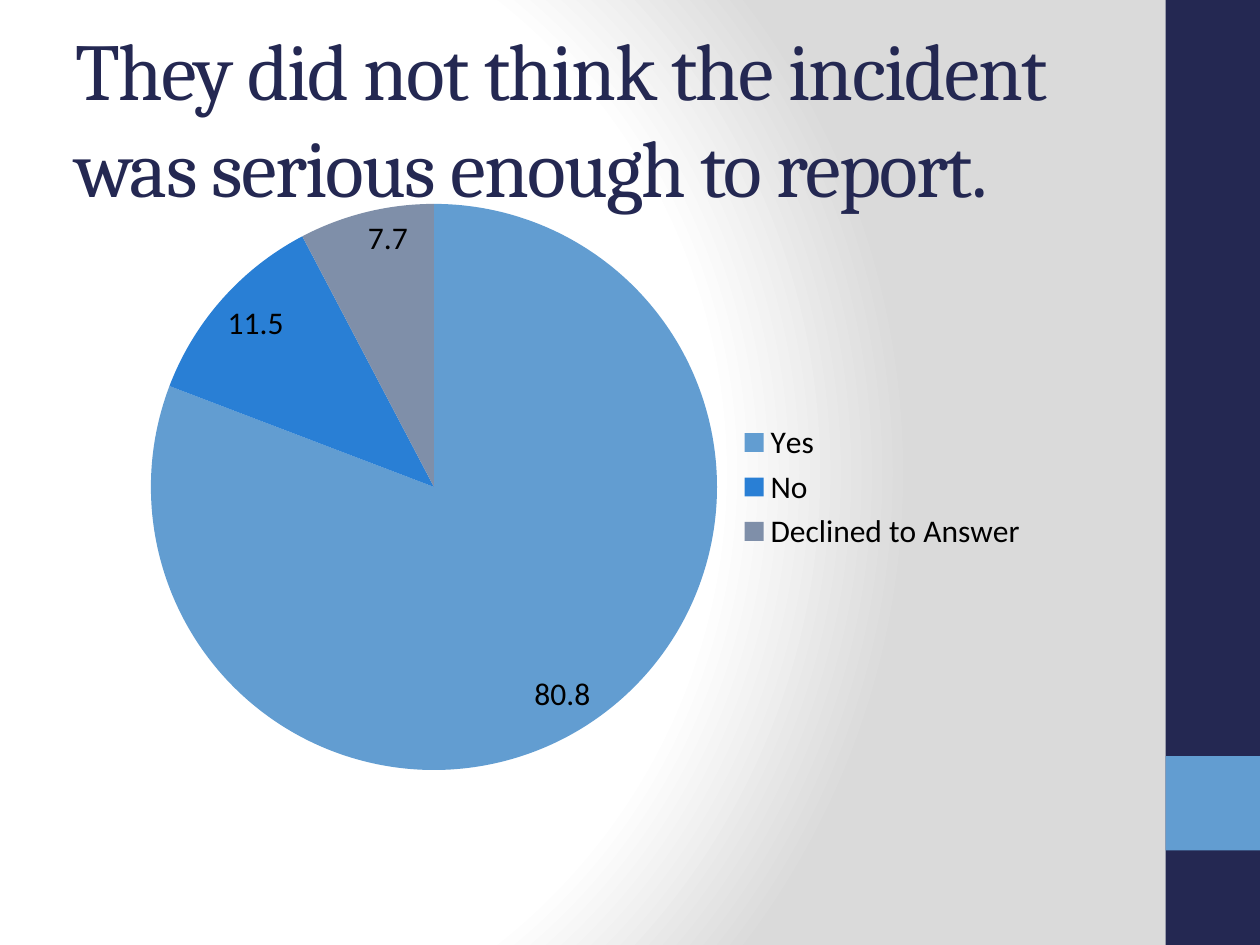
from lxml.etree import SubElement
from pptx import Presentation
from pptx.chart.data import CategoryChartData
from pptx.dml.color import RGBColor
from pptx.enum.chart import XL_CHART_TYPE, XL_LABEL_POSITION, XL_LEGEND_POSITION
from pptx.enum.shapes import MSO_SHAPE
from pptx.enum.text import MSO_ANCHOR
from pptx.oxml.ns import qn
from pptx.util import Emu, Pt

PX = 9144
NAVY, SKY, BLUE, SLATE = "242852", "629DD1", "297FD5", "7F8FA9"
WHITE, GREY, BLACK = "FFFFFF", "DADADA", "000000"


def rgb(value):
    return RGBColor.from_string(value)


def box(*lengths):
    return [Emu(n * PX) for n in lengths]


class Deck:
    title_font = "Cambria"
    body_font = "Calibri"

    def __init__(self, width, height):
        self.prs = Presentation()
        self.prs.slide_width, self.prs.slide_height = box(width, height)
        self.s = self.prs.slides.add_slide(self.prs.slide_layouts[6])

    def radial_background(self, stops, focus):
        self.s.background.fill.gradient()
        grad = self.s.element.find(".//" + qn("a:gradFill"))
        for child in list(grad):
            grad.remove(child)
        stop_list = SubElement(grad, qn("a:gsLst"))
        for percent, color in stops:
            gs = SubElement(stop_list, qn("a:gs"), pos=str(percent * 1000))
            SubElement(gs, qn("a:srgbClr"), val=color)
        circle = SubElement(grad, qn("a:path"), {"path": "circle"})
        edges = {side: str(n * 1000) for side, n in zip("ltrb", focus)}
        SubElement(circle, qn("a:fillToRect"), edges)

    def rect(self, x, y, w, h, color):
        sp = self.s.shapes.add_shape(MSO_SHAPE.RECTANGLE, *box(x, y, w, h))
        sp.shadow.inherit = False
        sp.fill.solid()
        sp.fill.fore_color.rgb = rgb(color)
        sp.line.fill.background()

    def title(self, x, y, w, h, text, size, color):
        tf = self.s.shapes.add_textbox(*box(x, y, w, h)).text_frame
        tf.word_wrap = True
        tf.vertical_anchor = MSO_ANCHOR.MIDDLE
        p = tf.paragraphs[0]
        r = p.add_run()
        r.text = text
        r.font.name = self.title_font
        r.font.size = Pt(size)
        r.font.color.rgb = rgb(color)
        r.font._element.set("spc", "-100")

    def pie(self, x, y, w, h, slices, size):
        data = CategoryChartData()
        data.categories = [name for name, _, _ in slices]
        data.add_series("Series 1", [value for _, value, _ in slices])
        chart = self.s.shapes.add_chart(XL_CHART_TYPE.PIE, *box(x, y, w, h), data).chart
        chart.has_title = False
        chart.font.name = self.body_font
        chart.font.size = Pt(size)
        chart.font.color.rgb = rgb(BLACK)
        chart.has_legend = True
        chart.legend.position = XL_LEGEND_POSITION.RIGHT
        chart.legend.include_in_layout = False
        plot = chart.plots[0]
        plot.vary_by_categories = True
        plot.has_data_labels = True
        plot.data_labels.show_value = True
        plot.data_labels.show_percentage = False
        plot.data_labels.position = XL_LABEL_POSITION.INSIDE_END
        for i, (_, _, color) in enumerate(slices):
            fill = plot.series[0].points[i].format.fill
            fill.solid()
            fill.fore_color.rgb = rgb(color)


def main():
    deck = Deck(1000, 750)
    deck.radial_background([(0, WHITE), (75, WHITE), (100, GREY)], (20, 50, 100, 50))
    deck.rect(925, 0, 75, 750, NAVY)
    deck.rect(925, 600, 75, 75, SKY)
    deck.title(50, 30, 833, 125,
               "They did not think the incident was serious enough to report.", 46, NAVY)
    deck.pie(106, 138, 720, 497,
             [("Yes", 80.8, SKY), ("No", 11.5, BLUE), ("Declined to Answer", 7.7, SLATE)], 18)
    deck.prs.save("out.pptx")


if __name__ == "__main__":
    main()
